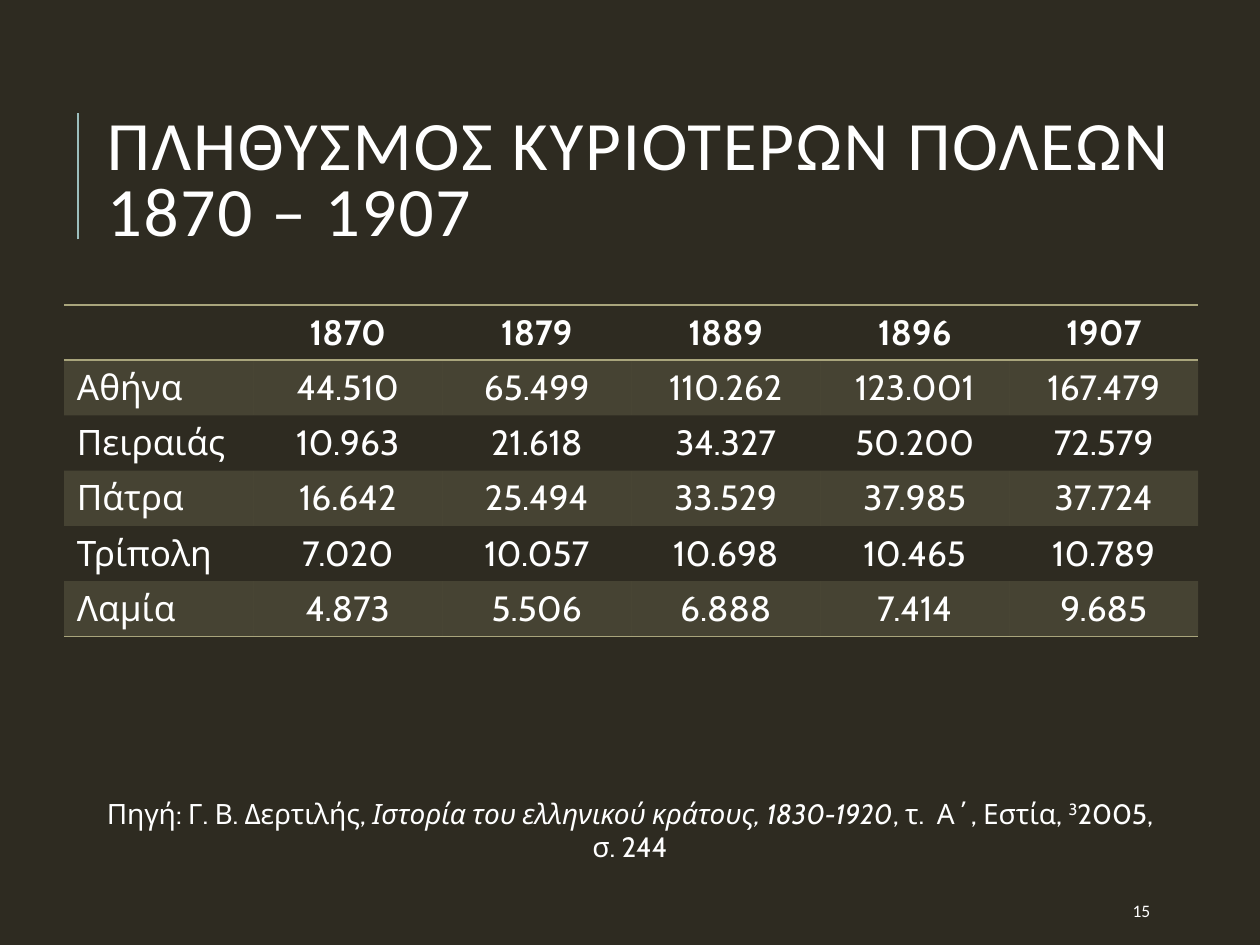
from lxml import etree
from pptx import Presentation, util as u
from pptx.dml.color import RGBColor
from pptx.enum import shapes, text
from pptx.oxml import ns

SAND, WHITE = "A9A57C", "FFFFFF"


def paint(color_format, hex_color, alpha=None):
    color_format.rgb = RGBColor.from_string(hex_color)
    if alpha:
        color = color_format._xFill.find(ns.qn("a:srgbClr"))
        etree.SubElement(color, ns.qn("a:alpha")).set("val", str(alpha * 1000))


def style(paragraph, size, face, bold=False):
    font = paragraph.font
    font.size, font.name, font.bold = u.Pt(size), face, bold
    paint(font.color, WHITE)


deck = Presentation()
deck.slide_width, deck.slide_height = u.Inches(10), u.Inches(7.5)
W, H = deck.slide_width, deck.slide_height
slide = deck.slides.add_slide(deck.slide_layouts[6])
slide.background.fill.solid()
paint(slide.background.fill.fore_color, "2E2B21")

accent = slide.shapes.add_connector(
    shapes.MSO_CONNECTOR.STRAIGHT, int(W * 0.062), int(H * 0.2533), int(W * 0.062), int(H * 0.12))
paint(accent.line.color, "9CBEBD")
accent.line.width = u.Pt(1.5)
etree.SubElement(accent._element.spPr, ns.qn("a:effectLst"))

boxes = []
for left, top, width, height in [(0.075, 0.085, 0.882, 0.219),
                                 (0.889, 0.944, 0.08, 0.04),
                                 (0.067, 0.836, 0.866, 0.089)]:
    frame = slide.shapes.add_textbox(
        int(W * left), int(H * top), int(W * width), int(H * height)).text_frame
    frame.word_wrap = True
    frame.vertical_anchor = text.MSO_ANCHOR.MIDDLE
    boxes.append(frame)
title, number, source = boxes

title.text = "ΠΛΗΘΥΣΜΟΣ ΚΥΡΙΟΤΕΡΩΝ ΠΟΛΕΩΝ\v1870 – 1907"
heading = title.paragraphs[0]
heading.line_spacing = 0.8
style(heading, 39.6, "Calibri")
for run in heading.runs:
    run.font._element.set("spc", "100")

number.text = "15"
style(number.paragraphs[0], 10, "Calibri")

source.vertical_anchor = text.MSO_ANCHOR.TOP
source.auto_size = text.MSO_AUTO_SIZE.SHAPE_TO_FIT_TEXT
citation = source.paragraphs[0]
citation.alignment = text.PP_ALIGN.CENTER
style(citation, 16, "Cabin")
for words, italic, baseline in [("Πηγή: Γ. Β. Δερτιλής, ", False, 0),
                                ("Ιστορία του ελληνικού κράτους, 1830-1920", True, 0),
                                (", τ.  Α΄, Εστία, ", False, 0),
                                ("3", False, 30),
                                ("2005, σ. 244", False, 0)]:
    run = citation.add_run()
    run.text = words
    if italic:
        run.font.italic = True
    if baseline:
        run.font._element.set("baseline", str(baseline * 1000))

population = [
    ["", "1870", "1879", "1889", "1896", "1907"],
    ["Αθήνα", "44.510", "65.499", "110.262", "123.001", "167.479"],
    ["Πειραιάς", "10.963", "21.618", "34.327", "50.200", "72.579"],
    ["Πάτρα", "16.642", "25.494", "33.529", "37.985", "37.724"],
    ["Τρίπολη", "7.020", "10.057", "10.698", "10.465", "10.789"],
    ["Λαμία", "4.873", "5.506", "6.888", "7.414", "9.685"],
]
rows, cols = len(population), len(population[0])
table = slide.shapes.add_table(
    rows, cols, int(W * 0.051), int(H * 0.3227), int(W * 0.9), int(H * 0.351)).table
table.first_row = table.horz_banding = False
table._tbl.tblPr.find(ns.qn("a:tableStyleId")).text = "{2D5ABB26-0587-4C30-8999-92F81FD0307C}"

for r, record in enumerate(population):
    for c, value in enumerate(record):
        cell = table.cell(r, c)
        cell.text = value
        entry = cell.text_frame.paragraphs[0]
        entry.alignment = text.PP_ALIGN.CENTER if c else text.PP_ALIGN.LEFT
        style(entry, 20, "Cabin", bold=r == 0)
        edges = {0: ["lnT", "lnB"], rows - 1: ["lnB"]}.get(r, [])
        for edge in edges:
            border = etree.SubElement(cell._tc.get_or_add_tcPr(), ns.qn(f"a:{edge}"), w=str(u.Pt(1)))
            ink = etree.SubElement(border, ns.qn("a:solidFill"))
            etree.SubElement(ink, ns.qn("a:srgbClr"), val=SAND)
        if r % 2:
            cell.fill.solid()
            paint(cell.fill.fore_color, SAND, alpha=20)
        else:
            cell.fill.background()

deck.save("out.pptx")
